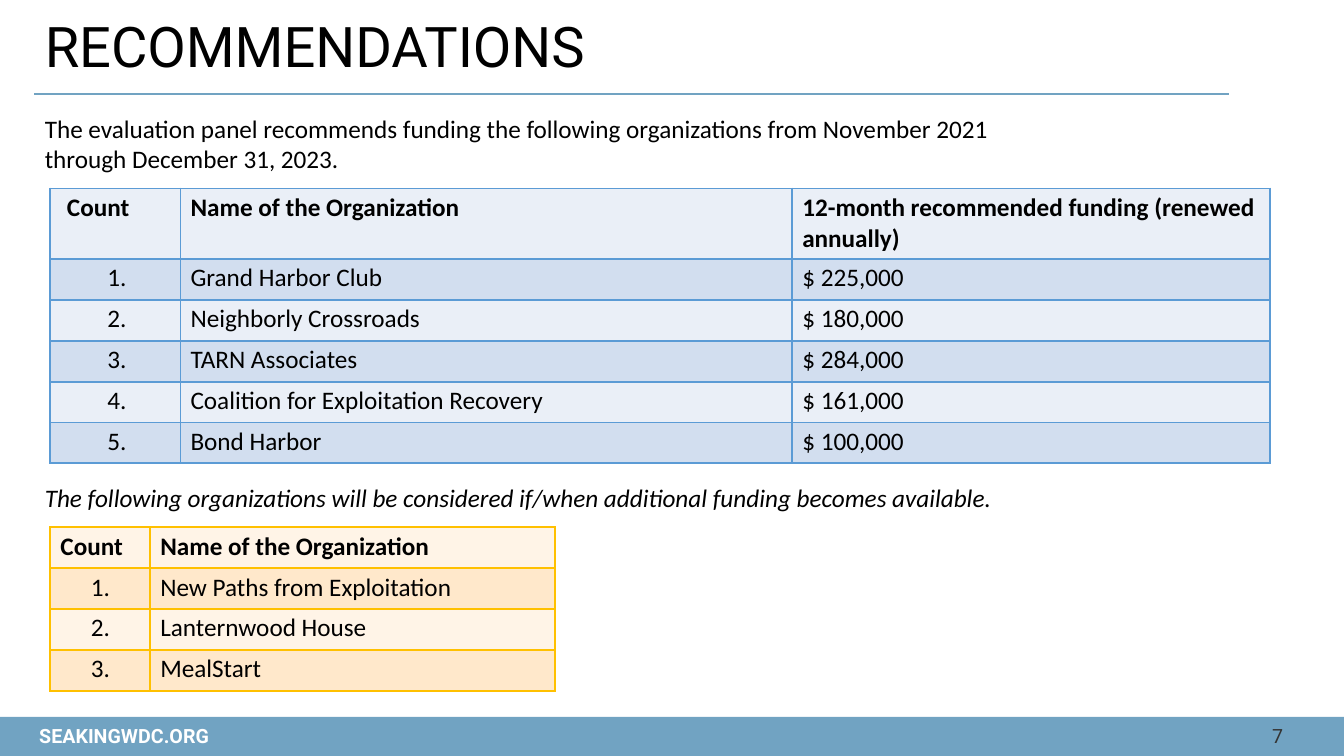
import pptx
import pptx.dml.color
import pptx.enum.shapes
import pptx.enum.text
import pptx.oxml
import pptx.oxml.ns
import pptx.util

Pt = pptx.util.Pt
ALIGN = pptx.enum.text.PP_ALIGN
ANCHOR = pptx.enum.text.MSO_ANCHOR
NAMESPACE = pptx.oxml.ns.nsdecls("a")


def color(value):
    return pptx.dml.color.RGBColor.from_string(value)


class SlideBuilder:
    body_font = "Calibri"
    heading_font = "Roboto"
    accent = "71A3C2"
    black = "000000"

    def __init__(self, slide):
        self.slide = slide

    def style(self, paragraph, size=18, font=None, fill=black, bold=False,
              italic=False, align=ALIGN.LEFT):
        paragraph.alignment = align
        paragraph.font.size = Pt(size)
        paragraph.font.name = font or self.body_font
        paragraph.font.color.rgb = color(fill)
        paragraph.font.bold = bold
        paragraph.font.italic = italic

    def text(self, words, left, top, width, height, anchor=ANCHOR.TOP, **style):
        shape = self.slide.shapes.add_textbox(Pt(left), Pt(top), Pt(width), Pt(height))
        frame = shape.text_frame
        frame.word_wrap = True
        frame.vertical_anchor = anchor
        frame.margin_left = frame.margin_right = 0
        frame.margin_top = frame.margin_bottom = 0
        frame.text = words
        self.style(frame.paragraphs[0], **style)

    def bar(self, left, top, width, height):
        shape = self.slide.shapes.add_shape(
            pptx.enum.shapes.MSO_SHAPE.RECTANGLE, Pt(left), Pt(top), Pt(width), Pt(height))
        shape.shadow.inherit = False
        shape.fill.solid()
        shape.fill.fore_color.rgb = color(self.accent)
        shape.line.fill.background()

    def rule(self, left, right, y):
        line = self.slide.shapes.add_connector(
            pptx.enum.shapes.MSO_CONNECTOR.STRAIGHT, Pt(left), Pt(y), Pt(right), Pt(y))
        line.line.color.rgb = color(self.accent)
        line.line.width = Pt(1.5)
        line._element.spPr.append(pptx.oxml.parse_xml(f"<a:effectLst {NAMESPACE}/>"))

    def border(self, cell, value):
        properties = cell._tc.get_or_add_tcPr()
        for index, side in enumerate(("lnL", "lnR", "lnT", "lnB")):
            properties.insert(index, pptx.oxml.parse_xml(
                f'<a:{side} {NAMESPACE} w="{Pt(1.5)}"><a:solidFill>'
                f'<a:srgbClr val="{value}"/></a:solidFill></a:{side}>'))

    def table(self, rows, left, top, widths, heights, bands, border,
              count_align, count_margins):
        """count_margins: right margin of the first column, header then body."""
        table = self.slide.shapes.add_table(
            len(rows), len(widths), Pt(left), Pt(top),
            Pt(sum(widths)), Pt(sum(heights))).table
        table.first_row = table.horz_banding = False
        for column, width in zip(table.columns, widths):
            column.width = Pt(width)
        for r, values in enumerate(rows):
            table.rows[r].height = Pt(heights[r])
            header = r == 0
            for c, value in enumerate(values):
                cell = table.cell(r, c)
                counting = c == 0
                centered = counting and not header and count_align == ALIGN.CENTER
                cell.margin_left = 0 if centered else Pt(7.2)
                cell.margin_right = Pt(count_margins[0 if header else 1]) if counting else 0
                cell.margin_top, cell.margin_bottom = Pt(2.8), 0
                cell.fill.solid()
                cell.fill.fore_color.rgb = color(bands[r % 2])
                self.border(cell, border)
                cell.text = value
                align = ALIGN.LEFT
                if centered or (counting and count_align == ALIGN.RIGHT):
                    align = count_align
                self.style(cell.text_frame.paragraphs[0], bold=header, align=align)


def main():
    presentation = pptx.Presentation()
    presentation.slide_width, presentation.slide_height = Pt(960), Pt(540)
    builder = SlideBuilder(presentation.slides.add_slide(presentation.slide_layouts[6]))

    # Footer
    builder.bar(0, 512, 960, 28)
    builder.text("SEAKINGWDC.ORG", 28, 513.4, 134, 24.5, ANCHOR.MIDDLE, size=14,
                 font=builder.heading_font, fill="FFFFFF", bold=True)
    builder.text("7", 908.6, 517, 21, 19, size=14,
                 font=builder.heading_font, fill="343433")

    # Title
    builder.text("RECOMMENDATIONS", 32, 7, 420, 50, ANCHOR.MIDDLE, size=40,
                 font=builder.heading_font)
    builder.rule(24.5, 877.7, 67)

    # Recommended organizations
    builder.text("The evaluation panel recommends funding the following organizations "
                 "from November 2021\vthrough December 31, 2023.", 32, 81, 726, 45)
    funded = [
        ("Grand Harbor Club", "225,000"),
        ("Neighborly Crossroads", "180,000"),
        ("TARN Associates", "284,000"),
        ("Coalition for Exploitation Recovery", "161,000"),
        ("Bond Harbor", "100,000"),
    ]
    rows = [("Count", "Name of the Organization",
             "12-month recommended funding (renewed annually)")]
    rows += [(f"{n}.", name, f"$ {amount}") for n, (name, amount) in enumerate(funded, 1)]
    builder.table(rows, 36, 134.6, [92.9, 437, 341.3], [50.4] + [29.2] * len(funded),
                  ("EAEFF7", "D2DEEF"), "5B9BD5", ALIGN.RIGHT, (36.5, 38.5))

    # Organizations in reserve
    builder.text("The following organizations will be considered if/when additional "
                 "funding becomes available.", 32, 344.5, 728, 24, italic=True)
    reserve = ["New Paths from Exploitation", "Lanternwood House", "MealStart"]
    rows = [("Count", "Name of the Organization")]
    rows += [(f"{n}.", name) for n, name in enumerate(reserve, 1)]
    builder.table(rows, 36, 376.6, [71.3, 289.4], [29.2] * len(rows),
                  ("FFF4E7", "FFE8CB"), "FFC000", ALIGN.CENTER, (0, 0))

    presentation.save("out.pptx")


if __name__ == "__main__":
    main()
